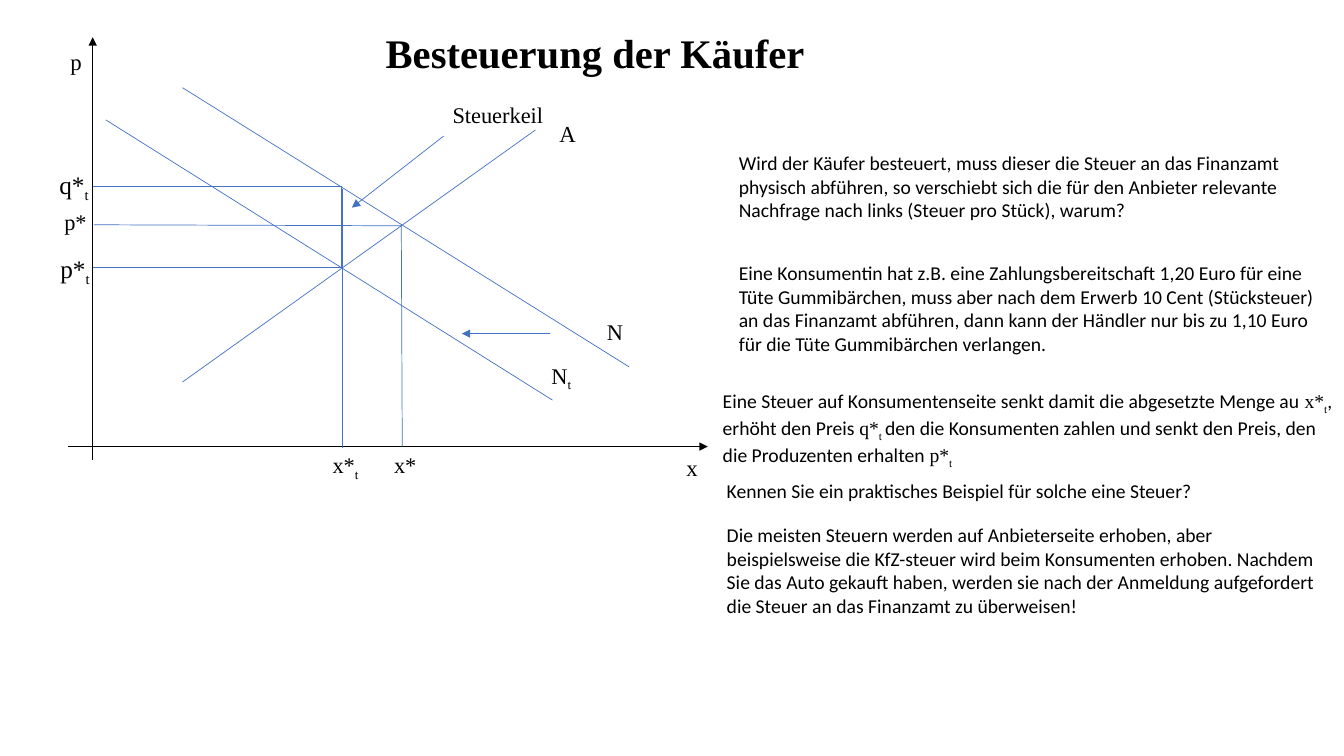
from dataclasses import dataclass

from lxml import etree
from pptx import Presentation
from pptx import util as u
from pptx.dml.color import RGBColor
from pptx.enum import shapes, text
from pptx.oxml.ns import qn

PX = 9144  # 100 px to the inch
SERIF, SANS = "Times New Roman", "Calibri"
BLACK, BLUE = "000000", "4472C4"


@dataclass(frozen=True)
class Line:
    start: tuple[int, int]
    end: tuple[int, int]
    color: str = BLUE
    width: float = 0.5
    arrow: bool = False


@dataclass(frozen=True)
class Run:
    words: str
    font: str = SANS
    subscript: bool = False


@dataclass(frozen=True)
class Label:
    """A symbol of the diagram with an optional subscript."""
    box: tuple[int, int, int, int]
    symbol: str
    index: str = ""
    size: float = 16


@dataclass(frozen=True)
class Remark:
    box: tuple[int, int, int, int]
    runs: tuple[Run, ...]


AXES = [
    Line((92, 456), (92, 37), BLACK, 0.75, True),
    Line((67, 443), (702, 443), BLACK, 0.75, True),
]
CURVES = [
    Line((181, 379), (531, 129)),
    Line((181, 87), (624, 364)),
    Line((105, 119), (548, 397)),
]
GUIDES = [
    Line((339, 266), (339, 185)),
    Line((92, 185), (339, 185)),
    Line((92, 265), (339, 265)),
    Line((93, 223), (398, 224)),
    Line((399, 443), (398, 223)),
    Line((340, 444), (340, 188), width=0.75),
]
POINTERS = [
    Line((546, 331), (458, 331), arrow=True),
    Line((440, 135), (349, 206), arrow=True),
]
LABELS = [
    Label((60, 42, 32, 38), "p", size=16.3),
    Label((671, 445, 32, 38), "x", size=16.3),
    Label((545, 114, 37, 38), "A", size=16.3),
    Label((592, 311, 37, 38), "N"),
    Label((537, 354, 41, 37), "N", "t"),
    Label((320, 443, 47, 37), "x*", "t"),
    Label((381, 443, 43, 37), "x*"),
    Label((54, 202, 43, 37), "p*"),
    Label((50, 246, 50, 40), "p*", "t", 18),
    Label((49, 163, 50, 40), "q*", "t", 18),
    Label((439, 95, 112, 37), "Steuerkeil"),
]
REMARKS = [
    Remark((723, 145, 610, 81), (Run(
        "Wird der Käufer besteuert, muss dieser die Steuer an das Finanzamt physisch "
        "abführen, so verschiebt sich die für den Anbieter relevante Nachfrage nach "
        "links (Steuer pro Stück), warum?"),)),
    Remark((723, 254, 610, 104), (Run(
        "Eine Konsumentin hat z.B. eine Zahlungsbereitschaft 1,20 Euro für eine Tüte "
        "Gummibärchen, muss aber nach dem Erwerb 10 Cent (Stücksteuer) an das Finanzamt "
        "abführen, dann kann der Händler nur bis zu 1,10 Euro für die Tüte "
        "Gummibärchen verlangen."),)),
    Remark((707, 381, 626, 81), (
        Run("Eine Steuer auf Konsumentenseite senkt damit die abgesetzte Menge au "),
        Run("x*", SERIF), Run("t", SERIF, True),
        Run(", erhöht den Preis "),
        Run("q*", SERIF), Run("t ", SERIF, True),
        Run("den die Konsumenten zahlen und senkt den Preis, den die Produzenten erhalten "),
        Run("p*", SERIF), Run("t", SERIF, True))),
    Remark((711, 470, 610, 34), (Run(
        "Kennen Sie ein praktisches Beispiel für solche eine Steuer?"),)),
    Remark((711, 514, 610, 104), (Run(
        "Die meisten Steuern werden auf Anbieterseite erhoben, aber beispielsweise die "
        "KfZ-steuer wird beim Konsumenten erhoben. Nachdem Sie das Auto gekauft haben, "
        "werden sie nach der Anmeldung aufgefordert die Steuer an das Finanzamt zu "
        "überweisen!"),)),
]


def rgb(color: str) -> RGBColor:
    return RGBColor.from_string(color)


def emu(*lengths: int) -> list[int]:
    return [length * PX for length in lengths]


def draw_line(slide, line: Line) -> None:
    connector = slide.shapes.add_connector(
        shapes.MSO_CONNECTOR.STRAIGHT, *emu(*line.start, *line.end))
    connector.line.color.rgb = rgb(line.color)
    connector.line.width = u.Pt(line.width)
    properties = connector._element.spPr
    if line.arrow:
        etree.SubElement(properties.find(qn("a:ln")), qn("a:tailEnd"), type="triangle")
    etree.SubElement(properties, qn("a:effectLst"))


def draw_text(slide, box: tuple[int, int, int, int], runs: tuple[Run, ...],
              size: float, wrap: bool) -> None:
    frame = slide.shapes.add_textbox(*emu(*box)).text_frame
    frame.word_wrap = wrap
    frame.auto_size = text.MSO_AUTO_SIZE.SHAPE_TO_FIT_TEXT
    paragraph = frame.paragraphs[0]
    paragraph.font.size = u.Pt(size)
    paragraph.font.color.rgb = rgb(BLACK)
    fonts = {run.font for run in runs}
    if len(fonts) == 1:
        paragraph.font.name = runs[0].font
    for run in runs:
        part = paragraph.add_run()
        part.text = run.words
        if len(fonts) > 1:
            part.font.name = run.font
        if run.subscript:
            part._r.get_or_add_rPr().set("baseline", "-25000")


def draw_label(slide, label: Label) -> None:
    runs = (Run(label.symbol, SERIF),)
    if label.index:
        runs += (Run(label.index, SERIF, True),)
    draw_text(slide, label.box, runs, label.size, wrap=False)


def write_title(slide, heading: str) -> None:
    title = slide.shapes.title
    title.left, title.top, title.width, title.height = emu(175, 11, 831, 81)
    frame = title.text_frame
    frame.text = heading
    frame.auto_size = text.MSO_AUTO_SIZE.NONE
    frame.vertical_anchor = text.MSO_ANCHOR.MIDDLE
    paragraph = frame.paragraphs[0]
    paragraph.alignment = text.PP_ALIGN.CENTER
    paragraph.font.name = SERIF
    paragraph.font.size = u.Pt(29)
    paragraph.font.bold = True
    paragraph.font.color.rgb = rgb(BLACK)


def main() -> None:
    deck = Presentation()
    deck.slide_width, deck.slide_height = emu(1333, 750)
    slide = deck.slides.add_slide(deck.slide_layouts[5])
    write_title(slide, "Besteuerung der Käufer")
    for line in AXES + CURVES + GUIDES + POINTERS:
        draw_line(slide, line)
    for label in LABELS:
        draw_label(slide, label)
    for remark in REMARKS:
        draw_text(slide, remark.box, remark.runs, 14, wrap=True)
    deck.save("out.pptx")


if __name__ == "__main__":
    main()
